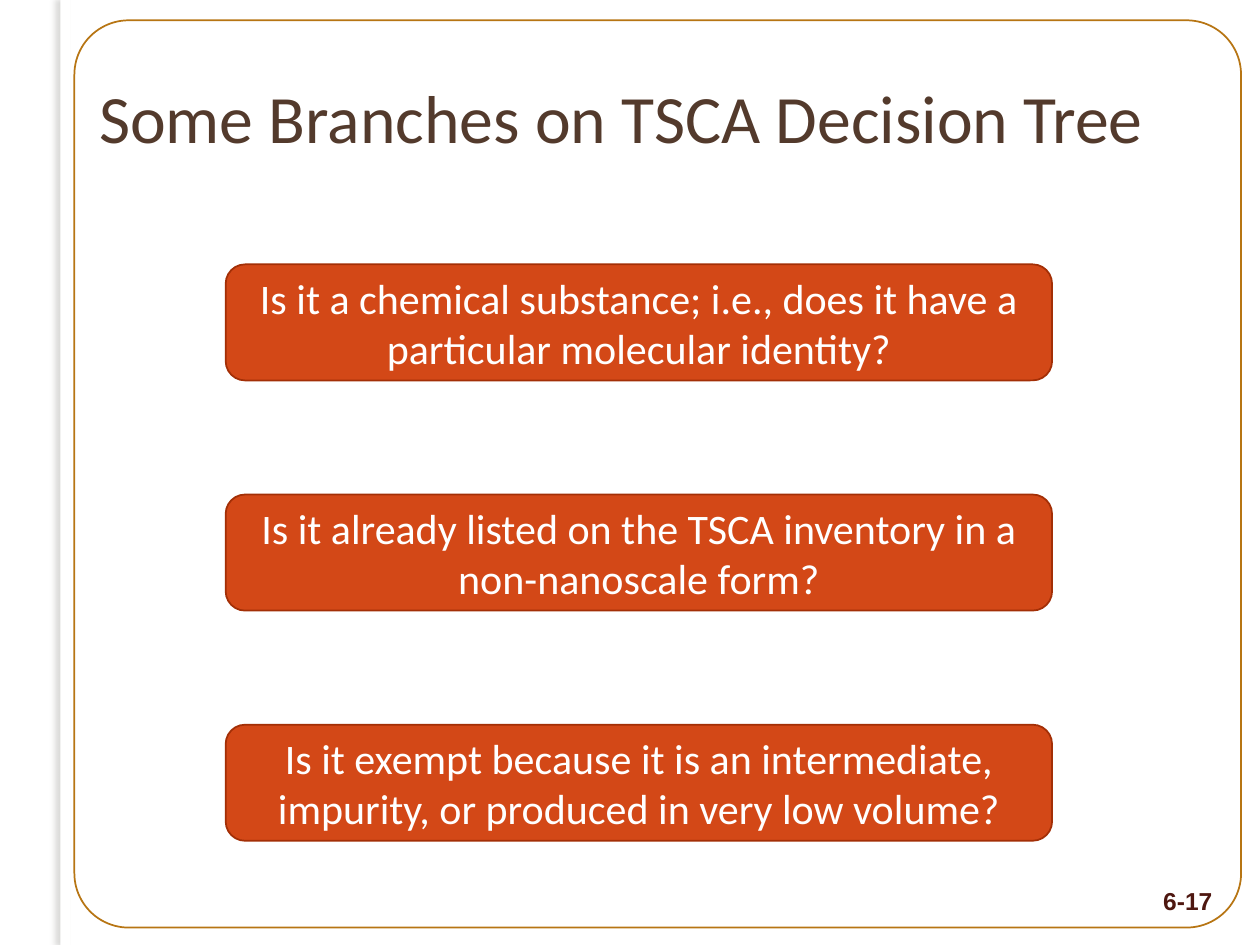
from lxml import etree
from pptx import Presentation
from pptx import util as u
from pptx.dml.color import RGBColor
from pptx.enum import shapes, text
from pptx.oxml import ns


def rgb(value):
    return RGBColor.from_string(value)


def write(sp, words, size, font, color, align, bold=False):
    """Put one wrapped, vertically centred run into a shape."""
    tf = sp.text_frame
    tf.word_wrap = True
    tf.vertical_anchor = text.MSO_ANCHOR.MIDDLE
    p = tf.paragraphs[0]
    p.alignment = align
    r = p.add_run()
    r.text = words
    r.font.size = u.Pt(size)
    r.font.name = font
    r.font.bold = bold
    r.font.color.rgb = rgb(color)


prs = Presentation()
prs.slide_width, prs.slide_height = u.Cm(25.4), u.Cm(19.05)
s = prs.slides.add_slide(prs.slide_layouts[6])

# White strip with a soft shadow to its left
strip = s.shapes.add_shape(shapes.MSO_SHAPE.RECTANGLE,
                           u.Cm(1.22), 0, u.Cm(0.2), prs.slide_height)
strip.shadow.inherit = False
strip.fill.solid()
strip.fill.fore_color.rgb = rgb("FFFFFF")
strip.line.fill.background()
effects = strip._element.spPr.find(ns.qn("a:effectLst"))
shadow = etree.SubElement(effects, ns.qn("a:outerShdw"),
                          blurRad=str(u.Pt(3)), dist=str(u.Pt(3)),
                          dir="10800000", algn="ctr", rotWithShape="0")
tint = etree.SubElement(shadow, ns.qn("a:srgbClr"), val="74726D")
etree.SubElement(tint, ns.qn("a:alpha"), val="25000")

# Rounded frame around the content
frame = s.shapes.add_shape(shapes.MSO_SHAPE.ROUNDED_RECTANGLE,
                           u.Cm(1.5), u.Cm(0.41), u.Cm(23.52), u.Cm(18.29))
frame.adjustments[0] = 0.06
frame.shadow.inherit = False
frame.fill.background()
frame.line.color.rgb = rgb("B77513")
frame.line.width = u.Pt(1)

number = s.shapes.add_textbox(u.Cm(22.91), u.Cm(17.78), u.Cm(1.78), u.Cm(0.74))
write(number, "6-17", 14, "Arial", "4E1710", text.PP_ALIGN.RIGHT, bold=True)

title = s.shapes.add_textbox(u.Cm(1.75), u.Cm(0.76), u.Cm(23.06), u.Cm(3.18))
write(title, "Some Branches on TSCA Decision Tree", 38.7, "Calibri", "533A2C",
      text.PP_ALIGN.LEFT)

questions = [
    "Is it a chemical substance; i.e., does it have a particular molecular identity?",
    "Is it already listed on the TSCA inventory in a non-nanoscale form?",
    "Is it exempt because it is an intermediate, impurity, or produced in very low volume?",
]
for i, question in enumerate(questions):
    sp = s.shapes.add_shape(shapes.MSO_SHAPE.ROUNDED_RECTANGLE,
                            u.Cm(4.55), u.Cm(5.33 + 4.64 * i),
                            u.Cm(16.66), u.Cm(2.34))
    sp.shadow.inherit = False
    sp.fill.solid()
    sp.fill.fore_color.rgb = rgb("D34817")
    sp.line.color.rgb = rgb("A32F06")
    sp.line.width = u.Pt(1)
    write(sp, question, 24, "Calibri", "FFFFFF", text.PP_ALIGN.CENTER)

prs.save("out.pptx")
